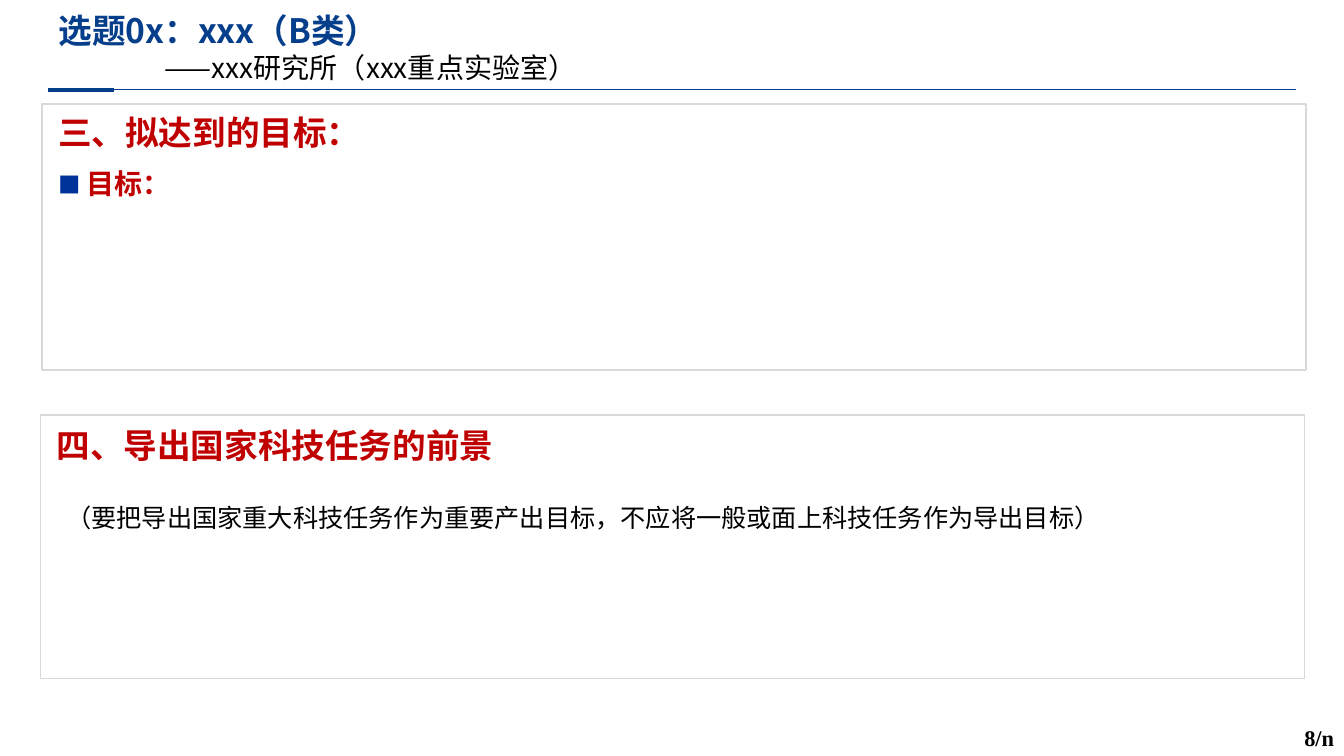
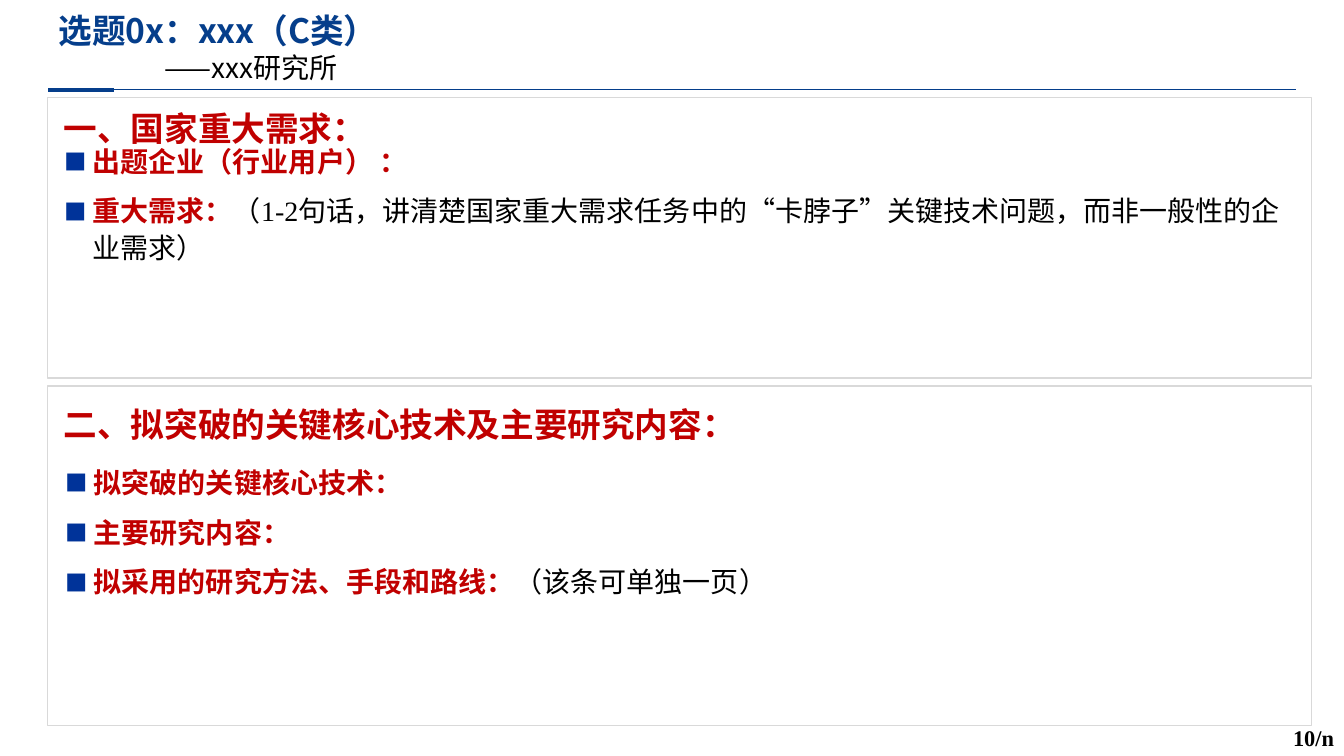
from lxml.etree import SubElement as Sub
from pptx import Presentation
from pptx.dml.color import RGBColor as RGB
from pptx.enum.shapes import MSO_CONNECTOR as Conn, MSO_SHAPE as Shape
from pptx.enum.text import MSO_ANCHOR as Anchor, MSO_AUTO_SIZE as Fit, PP_ALIGN as Align
from pptx.oxml.ns import qn
from pptx.util import Pt

HUES = {"navy": "053E8B", "red": "C00000", "ink": "000000",
        "mark": "003399", "edge": "D9D9D9", "white": "FFFFFF"}
SANS, SERIF = "Noto Sans CJK SC", "Times New Roman"


def hue(name):
    return RGB.from_string(HUES[name])


def write(para, text, size=20, color="ink", bold=False, face=SANS):
    run = para.add_run()
    run.text = text
    font = run.font
    font.size, font.bold, font.name = Pt(size), bold, face
    font.color.rgb = hue(color)
    # East Asian glyphs always use the sans face
    Sub(font._element, qn("a:ea")).set("typeface", SANS)


def space(para, line, after=0, align=Align.LEFT):
    para.line_spacing, para.space_before = Pt(line), Pt(0)
    para.space_after, para.alignment = Pt(after), align


def indent(para, left, first=0):
    props = para._p.get_or_add_pPr()
    props.set("marL", str(Pt(left)))
    props.set("indent", str(Pt(first)))
    return props


def bullet(para):
    props = indent(para, 20, -20)
    Sub(Sub(props, qn("a:buClr")), qn("a:srgbClr")).set("val", HUES["mark"])
    Sub(props, qn("a:buSzPct")).set("val", "80000")
    Sub(props, qn("a:buFont")).set("typeface", SANS)
    Sub(props, qn("a:buChar")).set("char", "■")


def place(shape, x, y, w, h, anchor=Anchor.TOP):
    shape.left, shape.top, shape.width, shape.height = Pt(x), Pt(y), Pt(w), Pt(h)
    frame = shape.text_frame
    frame.word_wrap, frame.auto_size = True, Fit.NONE
    frame.vertical_anchor = anchor
    return frame


def label(slide, box, text, line, after=0, align=Align.LEFT, anchor=Anchor.TOP, **style):
    frame = place(slide.shapes.add_textbox(0, 0, 0, 0), *box, anchor)
    space(frame.paragraphs[0], line, after, align)
    write(frame.paragraphs[0], text, **style)


def rule(slide, x, end, y, width):
    line = slide.shapes.add_connector(Conn.STRAIGHT, Pt(x), Pt(y), Pt(end), Pt(y))
    line.line.color.rgb, line.line.width = hue("navy"), Pt(width)
    Sub(line._element.spPr, qn("a:effectLst"))


# Title band: topic, institute and the two-weight rule
def band(slide, topic, unit, x=34.6, y=3.6):
    frame = place(slide.shapes.title, x, y, 754, 60.5)
    first, second = frame.paragraphs[0], frame.add_paragraph()
    space(first, 29)
    write(first, topic, size=24, color="navy", bold=True)
    indent(second, 76)
    space(second, 24)
    write(second, unit)
    rule(slide, x + 17.2, x + 891.3, y + 60.5, 0.5)
    rule(slide, x, x + 46.8, y + 60.5, 3)


# Framed section with a red heading
def panel(slide, box, title, top=2.2, line=29):
    x, y, w, h = box
    rect = slide.shapes.add_shape(Shape.RECTANGLE, Pt(x), Pt(y), Pt(w), Pt(h))
    rect.shadow.inherit = False
    rect.fill.solid()
    rect.fill.fore_color.rgb = hue("white")
    rect.line.color.rgb, rect.line.width = hue("edge"), Pt(1)
    label(slide, (x + 4.5, y + top, w - 20, line + 7.2), title, line,
          anchor=Anchor.MIDDLE, size=24, color="red", bold=True)


# Bulleted list: red lead, then an optional plain remark
def points(body, box, items, dx, dy, h):
    x, y, w, _ = box
    tree = body._element.getparent()
    tree.append(body._element)  # in front of the panel
    frame = place(body, x + dx, y + dy, w - 18, h, Anchor.MIDDLE)
    for num, (lead, note) in enumerate(items):
        para = frame.add_paragraph() if num else frame.paragraphs[0]
        bullet(para)
        space(para, 26.4, 9)
        write(para, lead, color="red", bold=True)
        if note:
            write(para, note, face=SERIF)


# Page number in the corner
def page(slide, text):
    label(slide, (907.2, 514.8, 52.8, 31.7), text, 18.4, align=Align.RIGHT,
          size=16, bold=True, face=SERIF)


def goals(deck):
    slide = deck.slides.add_slide(deck.slide_layouts[1])
    band(slide, "选题0x：xxx（B类）", "——xxx研究所（xxx重点实验室）")
    upper, lower = (30, 74.2, 903, 190), (28.8, 296.6, 903, 188)
    panel(slide, upper, "三、拟达到的目标：")
    points(slide.placeholders[1], upper, [("目标：", "")], 4.5, 39.6, 32.4)
    panel(slide, lower, "四、导出国家科技任务的前景", top=2.9)
    x, y = lower[:2]
    label(slide, (x + 11.5, y + 56.2, 780, 30.2),
          "（要把导出国家重大科技任务作为重要产出目标，不应将一般或面上科技任务作为导出目标）",
          23.8, 9, size=18)
    page(slide, "8/n")


def needs(deck):
    slide = deck.slides.add_slide(deck.slide_layouts[3])
    band(slide, "选题0x：xxx（C类）", "——xxx研究所")
    upper, lower = (34, 69.8, 903, 200.2), (34, 275.8, 903, 242.6)
    panel(slide, upper, "一、国家重大需求：", top=-3.6, line=36)
    points(slide.placeholders[1], upper, [
        ("出题企业（行业用户） ：", ""),
        ("重大需求：", "（1-2句话，讲清楚国家重大需求任务中的“卡脖子”关键技术问题，而非一般性的企业需求）"),
    ], 5, 26.6, 96.5)
    panel(slide, lower, "二、拟突破的关键核心技术及主要研究内容：", top=8.6)
    points(slide.placeholders[2], lower, [
        ("拟突破的关键核心技术：", ""),
        ("主要研究内容：", ""),
        ("拟采用的研究方法、手段和路线：", "（该条可单独一页）"),
    ], 5.8, 50.4, 105)
    page(slide, "10/n")


def main():
    deck = Presentation()
    deck.slide_width, deck.slide_height = Pt(960), Pt(540)
    goals(deck)
    needs(deck)
    deck.save("out.pptx")


if __name__ == "__main__":
    main()
